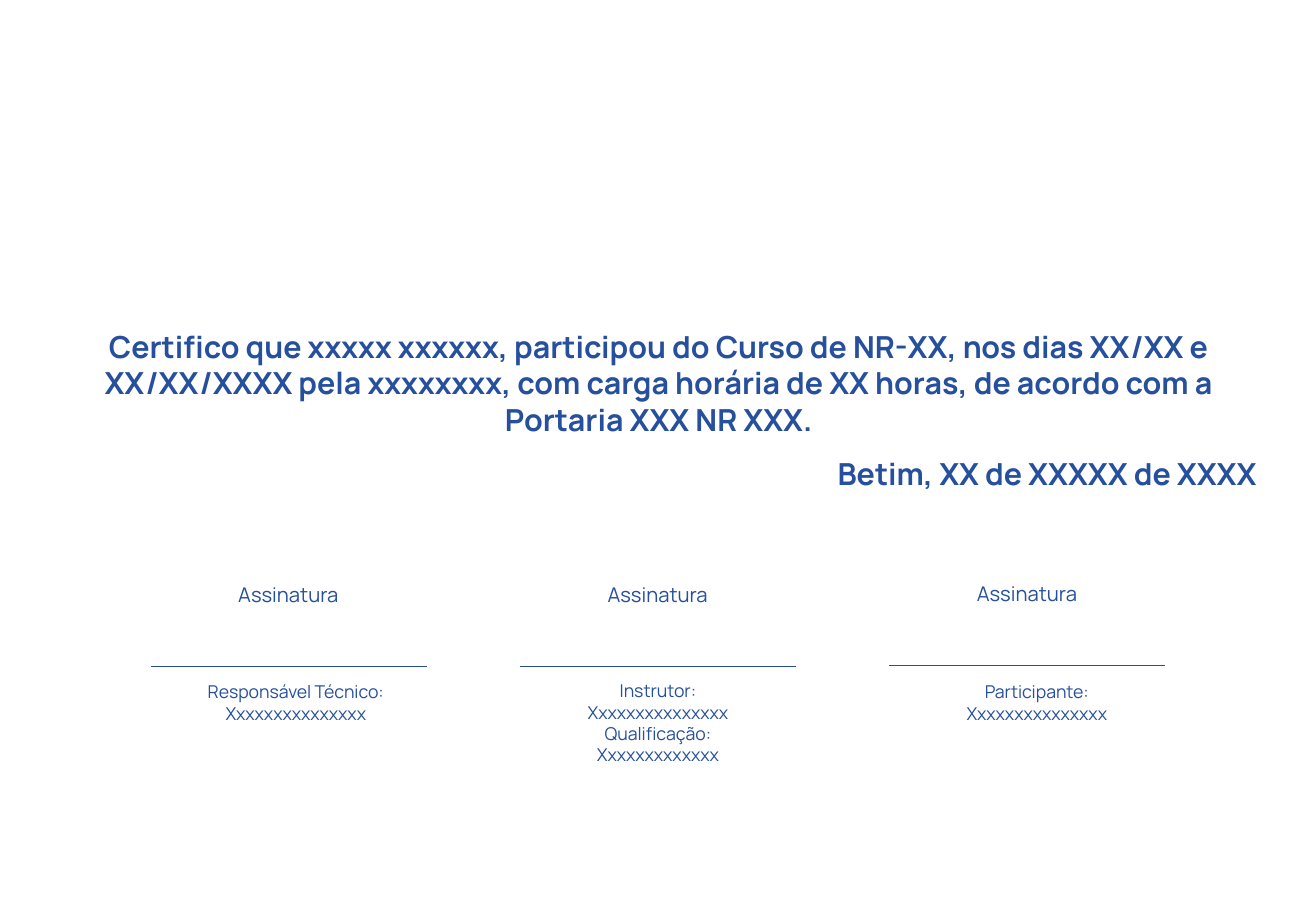
from lxml.etree import SubElement
from pptx import Presentation
from pptx.dml.color import RGBColor
from pptx.enum.shapes import MSO_CONNECTOR
from pptx.enum.text import MSO_AUTO_SIZE, PP_ALIGN
from pptx.oxml.ns import qn
from pptx.util import Cm, Pt

BLUE = RGBColor(0x26, 0x50, 0x9D)
FONT = "Manrope"

LINE_LEFT, LINE_WIDTH, COLUMN_STEP = 3.15, 5.77, 7.72
LABEL_INSET, LABEL_RISE = 1.04, 1.88

# Line height, caption left, top and height, caption paragraphs
SIGNERS = [
    (13.94, 2.54, 14.12, 1.6, ["Responsável Técnico:", "Xxxxxxxxxxxxxxx"]),
    (13.94, 10.11, 14.1, 2.49,
     ["Instrutor:", "Xxxxxxxxxxxxxxx\vQualificação:\vXxxxxxxxxxxxx"]),
    (13.92, 18.03, 14.12, 1.14, ["Participante:", "Xxxxxxxxxxxxxxx"]),
]


def add_text(s, left, top, width, height, paragraphs, size,
             bold=False, align=PP_ALIGN.CENTER):
    box = s.shapes.add_textbox(Cm(left), Cm(top), Cm(width), Cm(height))
    tf = box.text_frame
    tf.word_wrap = True
    tf.auto_size = MSO_AUTO_SIZE.SHAPE_TO_FIT_TEXT
    for i, text in enumerate(paragraphs):
        p = tf.add_paragraph() if i else tf.paragraphs[0]
        p.text = text
        p.alignment = align
        p.font.name = FONT
        p.font.size = Pt(size)
        p.font.bold = bold
        p.font.color.rgb = BLUE


def add_signature_line(s, left, top):
    line = s.shapes.add_connector(MSO_CONNECTOR.STRAIGHT, Cm(left), Cm(top),
                                  Cm(left + LINE_WIDTH), Cm(top))
    line.line.color.rgb = BLUE
    line.line.width = Pt(0.5)
    SubElement(line._element.spPr, qn("a:effectLst"))


def main():
    prs = Presentation()
    prs.slide_width, prs.slide_height = Cm(27.51), Cm(19.05)
    s = prs.slides.add_slide(prs.slide_layouts[6])

    add_text(s, 1.02, 6.73, 25.5, 2.57, [
        "Certifico que xxxxx xxxxxx, participou do Curso de NR-XX, nos dias "
        "XX/XX e XX/XX/XXXX pela xxxxxxxx, com carga horária de XX horas, "
        "de acordo com a Portaria XXX NR XXX."], 18, bold=True)
    add_text(s, 1.02, 9.4, 25.5, 1.02, ["Betim, XX de XXXXX de XXXX"], 18,
             bold=True, align=PP_ALIGN.RIGHT)

    for i, (line_top, left, top, height, caption) in enumerate(SIGNERS):
        line_left = LINE_LEFT + i * COLUMN_STEP
        add_text(s, line_left + LABEL_INSET, line_top - LABEL_RISE,
                 3.68, 0.76, ["Assinatura"], 12)
        add_signature_line(s, line_left, line_top)
        add_text(s, left, top, 7.29, height, caption, 10.5)

    prs.save("out.pptx")


if __name__ == "__main__":
    main()
